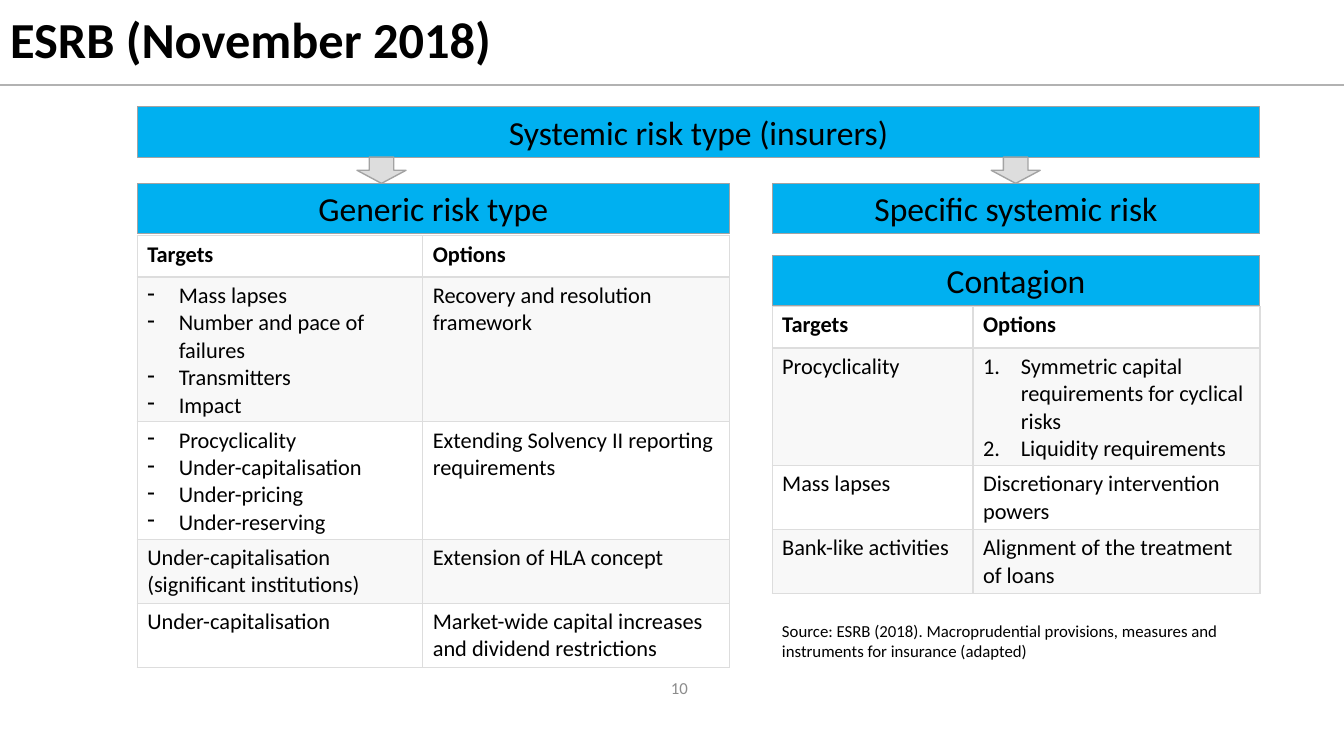
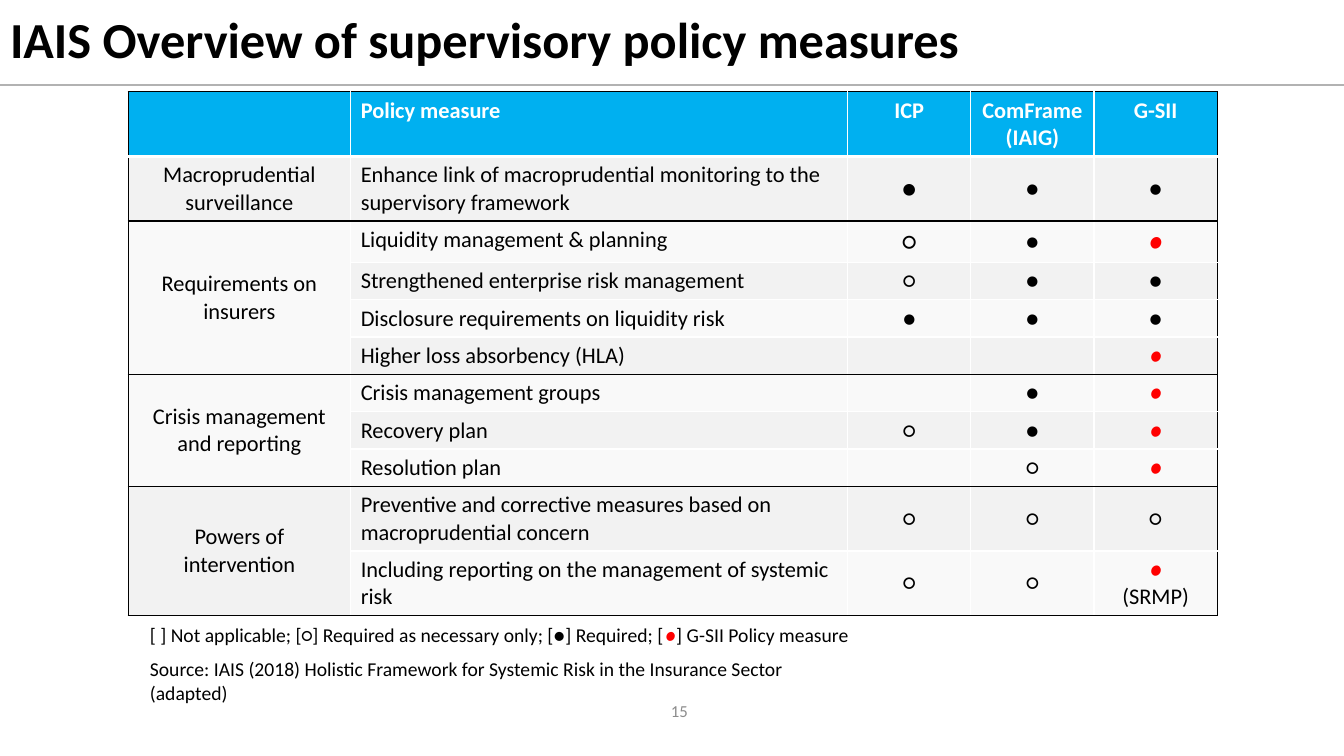
from collections import namedtuple
from dataclasses import dataclass
from lxml.etree import SubElement
from pptx import Presentation
from pptx.dml.color import RGBColor
from pptx.enum.shapes import MSO_CONNECTOR, MSO_SHAPE
from pptx.enum.text import MSO_ANCHOR, MSO_AUTO_SIZE, PP_ALIGN
from pptx.oxml.ns import qn
from pptx.util import Pt


@dataclass(frozen=True)
class Theme:
    font: str = "Calibri"
    black: str = "000000"
    white: str = "FFFFFF"
    blue: str = "00B0F0"
    red: str = "FF0000"
    rule: str = "B2B2B2"
    edge: str = "A3A3A3"
    grid: str = "DDDDDD"
    pale: str = "F8F8F8"
    light: str = "F9F9F9"
    dark: str = "F2F2F2"
    page: str = "8C8C8C"
    title: int = 36
    band: int = 24
    mark: int = 18
    body: int = 16
    note: int = 14
    small: int = 12


T = Theme()
WIDTH, HEIGHT = 960, 540
LEFT, CENTER, RIGHT = PP_ALIGN.LEFT, PP_ALIGN.CENTER, PP_ALIGN.RIGHT
TOP, MIDDLE = MSO_ANCHOR.TOP, MSO_ANCHOR.MIDDLE
List = namedtuple("List", "kind items")

# Risk tables: targets and options
HEAD = ("Targets", "Options")
GENERIC = [
    HEAD,
    (List("dash", ["Mass lapses", "Number and pace of failures", "Transmitters", "Impact"]),
     "Recovery and resolution framework"),
    (List("dash", ["Procyclicality", "Under-capitalisation", "Under-pricing", "Under-reserving"]),
     "Extending Solvency II reporting requirements"),
    ("Under-capitalisation (significant institutions)", "Extension of HLA concept"),
    ("Under-capitalisation", "Market-wide capital increases and dividend restrictions"),
]
SPECIFIC = [
    HEAD,
    ("Procyclicality",
     List("number", ["Symmetric capital requirements for cyclical risks", "Liquidity requirements"])),
    ("Mass lapses", "Discretionary intervention powers"),
    ("Bank-like activities", "Alignment of the treatment of loans"),
]

# Policy table: group, measure, ICP, ComFrame, G-SII
POLICY = [
    ("", "Policy measure", "ICP", "ComFrame\n(IAIG)", "G-SII"),
    ("Macroprudential surveillance",
     "Enhance link of macroprudential monitoring to the supervisory framework", "●", "●", "●"),
    ("Requirements on insurers", "Liquidity management & planning", "○", "●", "●"),
    ("", "Strengthened enterprise risk management", "○", "●", "●"),
    ("", "Disclosure requirements on liquidity risk", "●", "●", "●"),
    ("", "Higher loss absorbency (HLA)", "", "", "●"),
    ("Crisis management and reporting", "Crisis management groups", "", "●", "●"),
    ("", "Recovery plan", "○", "●", "●"),
    ("", "Resolution plan", "", "○", "●"),
    ("Powers of intervention",
     "Preventive and corrective measures based on macroprudential concern", "○", "○", "○"),
    ("", "Including reporting on the management of systemic risk", "○", "○", "●\n(SRMP)"),
]
GROUPS = [(1, 1), (2, 5), (6, 8), (9, 10)]
RED_ROWS = (2, 5, 6, 7, 8, 10)
LARGE = ((1, 2), (2, 2), (2, 4))


# Text
def rgb(code):
    return RGBColor.from_string(code)


def style(run, size, color=T.black, bold=False, slant=False):
    font = run.font
    font.name, font.size = T.font, Pt(size)
    font.bold, font.italic = bold, slant
    font.color.rgb = rgb(color)


def put(frame, text, size, color=T.black, bold=False, align=LEFT):
    frame.text = text
    for para in frame.paragraphs:
        para.alignment = align
        for run in para.runs:
            style(run, size, color, bold)
        if not para.runs:
            SubElement(para._p, qn("a:endParaRPr"), sz=str(size * 100))


def bullet(para, kind):
    gap = Pt(22.5 if kind == "dash" else 27)
    props = para._p.get_or_add_pPr()
    props.set("marL", str(gap))
    props.set("indent", str(-gap))
    if kind == "dash":
        SubElement(props, qn("a:buChar"), char="-")
    else:
        SubElement(props, qn("a:buAutoNum"), type="arabicPeriod")


def label(slide, box, text, size, color=T.black, align=LEFT, anchor=TOP):
    frame = slide.shapes.add_textbox(*map(Pt, box)).text_frame
    frame.word_wrap = True
    frame.vertical_anchor = anchor
    put(frame, text, size, color, align=align)
    return frame


# Shapes
def block(slide, kind, box, fill, width):
    shape = slide.shapes.add_shape(kind, *map(Pt, box))
    shape.shadow.inherit = False
    shape.fill.solid()
    shape.fill.fore_color.rgb = rgb(fill)
    shape.line.color.rgb = rgb(T.edge)
    shape.line.width = Pt(width)
    return shape


def band(slide, left, top, width, text):
    shape = block(slide, MSO_SHAPE.RECTANGLE, (left, top, width, 36), T.blue, 0.75)
    shape.text_frame.vertical_anchor = MIDDLE
    put(shape.text_frame, text, T.band, align=CENTER)


# Tables
def paint(cell, fill, edges):
    """Fill a cell and draw its edges, given as side: (colour, width)."""
    cell.fill.solid()
    cell.fill.fore_color.rgb = rgb(fill)
    props = cell._tc.get_or_add_tcPr()
    for spot, side in enumerate("LRTB"):
        color, width = edges[side]
        line = SubElement(props, qn("a:ln" + side), w=str(Pt(width)))
        SubElement(SubElement(line, qn("a:solidFill")), qn("a:srgbClr"), val=color)
        props.insert(spot, line)


def grid(slide, left, top, cols, rows):
    size = (len(rows), len(cols), left, top, sum(cols), sum(rows))
    table = slide.shapes.add_table(*size[:2], *map(Pt, size[2:])).table
    table.first_row = table.horz_banding = False
    for col, width in zip(table.columns, cols):
        col.width = Pt(width)
    for row, height in zip(table.rows, rows):
        row.height = Pt(height)
    return table


def risks(slide, left, top, cols, rows, data):
    table = grid(slide, left, top, cols, rows)
    for r, line in enumerate(data):
        for c, item in enumerate(line):
            cell = table.cell(r, c)
            many = isinstance(item, List)
            text = "\n".join(item.items) if many else item
            put(cell.text_frame, text, T.body, bold=r == 0)
            if many:
                for para in cell.text_frame.paragraphs:
                    bullet(para, item.kind)
            edges = dict.fromkeys("LRTB", (T.grid, 1))
            if r < 2:
                edges["B" if r == 0 else "T"] = (T.grid, 2)
            paint(cell, T.pale if r % 2 else T.white, edges)


def sides(r, c):
    """Black round the table and between groups, white elsewhere."""
    starts = [first for first, last in GROUPS[1:]]
    ends = [last for first, last in GROUPS]
    dark = {"L": c == 0, "R": c == 4, "T": r == 0 or r in starts,
            "B": r in ends or (c == 0 and r in starts)}
    edges = {side: (T.black if on else T.white, 1) for side, on in dark.items()}
    if r < 2:
        edges["B" if r == 0 else "T"] = (T.white, 3)
    return edges


def policy(slide):
    rows = [46.2, 46.2, 29.5] + [26.7] * 6 + [46.2] * 2
    table = grid(slide, 91.5, 65.5, [159, 355, 88, 88, 88], rows)
    for r, line in enumerate(POLICY):
        for c, text in enumerate(line):
            cell = table.cell(r, c)
            head = r == 0
            size = T.mark if (r, c) in LARGE else T.body
            put(cell.text_frame, text, size, T.white if head else T.black,
                head, LEFT if c == 1 else CENTER)
            cell.vertical_anchor = TOP if head or c == 1 else MIDDLE
            if c == 4 and r in RED_ROWS:
                mark = cell.text_frame.paragraphs[0].runs[0]
                style(mark, T.mark if r == 2 else T.body, T.red, slant=True)
            fill = T.blue if head else T.dark if r % 2 else T.light
            if c == 0 and r in (2, 6):
                fill = T.light
            paint(cell, fill, sides(r, c))
    for first, last in GROUPS:
        if last > first:
            table.cell(first, 0).merge(table.cell(last, 0))


# Shared frame
def setup(deck):
    deck.slide_width, deck.slide_height = Pt(WIDTH), Pt(HEIGHT)
    layout = deck.slide_layouts[5]
    title = layout.placeholders[0]
    title.left, title.top, title.width, title.height = map(Pt, (0, 0, WIDTH, 60))
    title.text_frame.vertical_anchor = MIDDLE
    return layout


def page(deck, layout, title, number, top):
    slide = deck.slides.add_slide(layout)
    line = slide.shapes.add_connector(
        MSO_CONNECTOR.STRAIGHT, *map(Pt, (0, 60.5, WIDTH, 60.5)))
    line.line.color.rgb = rgb(T.rule)
    line.line.width = Pt(1.5)
    SubElement(line.element.spPr, qn("a:effectLst"))
    frame = slide.shapes.title.text_frame
    frame.auto_size = MSO_AUTO_SIZE.NONE
    put(frame, title, T.title, bold=True)
    frame.paragraphs[0].line_spacing = 0.9
    label(slide, (461, top, 37.5, 29), number, T.small, T.page, RIGHT, MIDDLE)
    return slide


# Slides
def esrb(deck, layout):
    slide = page(deck, layout, "ESRB (November 2018)", "10", 476.5)
    left, right, wide, slim = 98, 551.5, 423, 348.5
    band(slide, left, 76.3, right + slim - left, "Systemic risk type (insurers)")
    for x in (255, 708):
        block(slide, MSO_SHAPE.DOWN_ARROW, (x, 112.3, 35, 18.7), T.grid, 1)
    band(slide, left, 131, wide, "Generic risk type")
    band(slide, right, 131, slim, "Specific systemic risk")
    risks(slide, left, 168.5, [204, 219], [29.5, 103, 84, 45.7, 45.7], GENERIC)
    risks(slide, right, 219, [143.5, 205], [29.5, 84, 45.7, 45.7], SPECIFIC)
    band(slide, right, 182.3, slim, "Contagion")
    label(slide, (right, 440, slim, 36),
          "Source: ESRB (2018). Macroprudential provisions, measures and "
          "instruments for insurance (adapted)", T.small)


def iais(deck, layout):
    slide = page(deck, layout, "IAIS Overview of supervisory policy measures", "15", 493)
    policy(slide)
    key = label(slide, (100, 441.5, 530, 24.5),
                "[ ] Not applicable; [○] Required as necessary only; [●] Required; [", T.note)
    for text, color in (("●", T.red), ("] G-SII Policy measure", T.black)):
        run = key.paragraphs[0].add_run()
        run.text = text
        style(run, T.note, color, slant=color == T.red)
    label(slide, (100, 466, 520, 41),
          "Source: IAIS (2018) Holistic Framework for Systemic Risk in the "
          "Insurance Sector (adapted)", T.note)


def main():
    deck = Presentation()
    layout = setup(deck)
    esrb(deck, layout)
    iais(deck, layout)
    deck.save("out.pptx")


if __name__ == "__main__":
    main()
